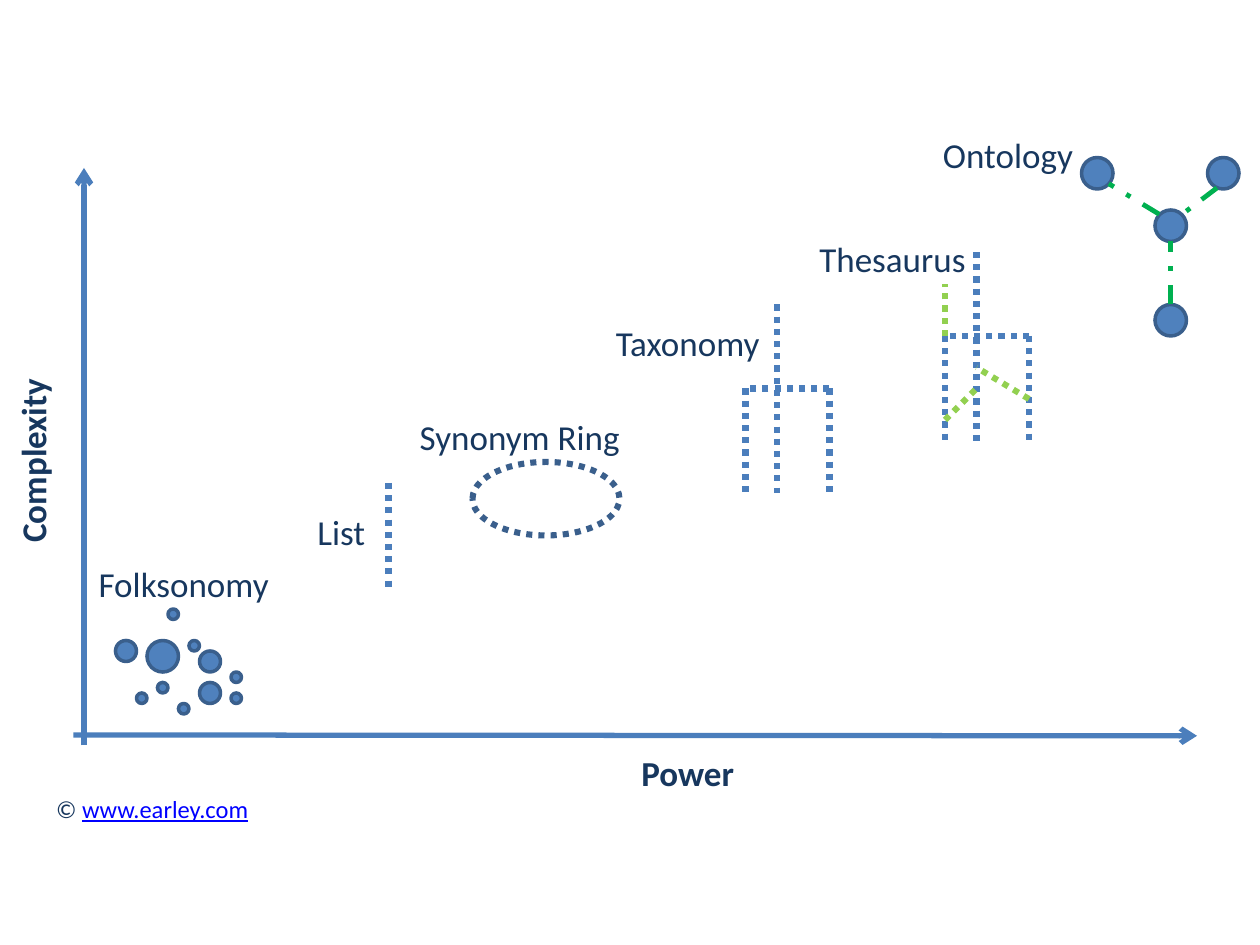
from lxml import etree
from pptx import Presentation
from pptx.dml.color import RGBColor
from pptx.enum.dml import MSO_LINE
from pptx.enum.shapes import MSO_CONNECTOR, MSO_SHAPE
from pptx.enum.text import MSO_AUTO_SIZE, PP_ALIGN
from pptx.oxml.ns import qn
from pptx.util import Cm, Pt

STRAIGHT = MSO_CONNECTOR.STRAIGHT
OVAL = MSO_SHAPE.OVAL
DOTTED = MSO_LINE.ROUND_DOT  # written as sysDot
DASH_DOT = MSO_LINE.DASH_DOT
CENTER = PP_ALIGN.CENTER
FIT_SHAPE = MSO_AUTO_SIZE.SHAPE_TO_FIT_TEXT

COLORS = {
    "text": "17375E", "address": "0000FF", "line": "4B7EBC", "fill": "4F81BD",
    "outline": "3A5F8C", "related": "92D050", "relation": "00B050",
}
COLORS = {name: RGBColor.from_string(value) for name, value in COLORS.items()}

# All positions below are counted in grid steps, 120 across and 90 down
STEP = Cm(25.4) / 120

deck = Presentation()
deck.slide_width, deck.slide_height = Cm(25.4), Cm(19.05)
page = deck.slides.add_slide(deck.slide_layouts[6])


def add_label(text, left, top, width, height=5.25, size=20, bold=False,
              vertical=False, address=""):
    box = page.shapes.add_textbox(*(round(n * STEP) for n in (left, top, width, height)))
    frame = box.text_frame
    frame.word_wrap = True
    frame.auto_size = FIT_SHAPE
    if vertical:
        frame._txBody.bodyPr.set("vert", "vert270")
    para = frame.paragraphs[0]
    para.alignment = CENTER
    for words, color in ((text, "text"), (address, "address")):
        if words:
            span = para.add_run()
            span.text = words
            span.font.name = "Calibri"
            span.font.size = Pt(size)
            span.font.bold = bold
            span.font.underline = color == "address"
            span.font.color.rgb = COLORS[color]


def add_line(x1, y1, x2, y2, color="line", weight=3.5, dash=DOTTED, arrow=False):
    line = page.shapes.add_connector(STRAIGHT, *(round(n * STEP) for n in (x1, y1, x2, y2)))
    line.line.color.rgb = COLORS[color]
    line.line.width = Pt(weight)
    if dash:
        line.line.dash_style = dash
    if arrow:
        etree.SubElement(line.line._get_or_add_ln(), qn("a:tailEnd"), type="arrow")
    etree.SubElement(line._element.spPr, qn("a:effectLst"))


# Axes
add_line(8, 71, 8, 16, weight=3, dash=None, arrow=True)
add_line(7, 70, 114, 70.08, weight=3, dash=None, arrow=True)
add_label("Power", 44, 71, 43, bold=True)
add_label("Complexity", 0.5, 28.75, 6.5, 30.25, bold=True, vertical=True)
add_label("© ", 0, 75, 29, 4, size=14, address="www.earley.com")

# Folksonomy cloud and ontology nodes: left, top, diameter
circles = [
    (16, 58, 1), (14, 61, 3), (19, 62, 2), (15, 65, 1), (11, 61, 2), (13, 66, 1),
    (19, 65, 2), (18, 61, 1), (17, 67, 1), (22, 66, 1), (22, 64, 1),
    (110, 20, 3), (103, 15, 3), (110, 29, 3), (115, 15, 3),
]
for left, top, diameter in circles:
    circle = page.shapes.add_shape(
        OVAL, *(round(n * STEP) for n in (left, top, diameter, diameter)))
    circle.shadow.inherit = False
    circle.fill.solid()
    circle.fill.fore_color.rgb = COLORS["fill"]
    circle.line.color.rgb = COLORS["outline"]
    circle.line.width = Pt(2)

# List
add_line(37, 46, 37, 56)

# Synonym ring
ring = page.shapes.add_shape(OVAL, *(round(n * STEP) for n in (45, 44, 14, 7)))
ring.shadow.inherit = False
ring.fill.background()
ring.line.color.rgb = COLORS["outline"]
ring.line.width = Pt(3.5)
ring.line.dash_style = DOTTED

# Taxonomy and thesaurus trees: a trunk and two branches under a crossbar
for trunk, top, bar in ((74, 29, 37), (93, 24, 32)):
    left, right, bottom = trunk - 3, trunk + 5, top + 18
    add_line(trunk, top, trunk, bottom)
    add_line(left, bar, left, bottom)
    add_line(right, bar, right, bottom)
    add_line(right, bar, left, bar)

# Related terms in the thesaurus
for ends in ((98, 38, 93, 35), (90, 40, 93, 37), (90, 32, 90, 27)):
    add_line(*ends, color="related")

# Relations between ontology nodes
for ends in ((110.4, 20.4, 105.6, 17.5), (115.9, 17.9, 112.6, 20.4), (111.5, 29, 111.5, 23)):
    add_line(*ends, color="relation", weight=2.75, dash=DASH_DOT)

# Names of the knowledge structures: left, top, width
names = [
    ("Folksonomy", 8, 53, 19), ("List", 28, 48, 9), ("Synonym Ring", 38, 39, 23),
    ("Taxonomy", 57, 30, 17), ("Thesaurus", 76, 22, 18), ("Ontology", 88, 12.1, 16),
]
for name, left, top, width in names:
    add_label(name, left, top, width)

deck.save("out.pptx")
